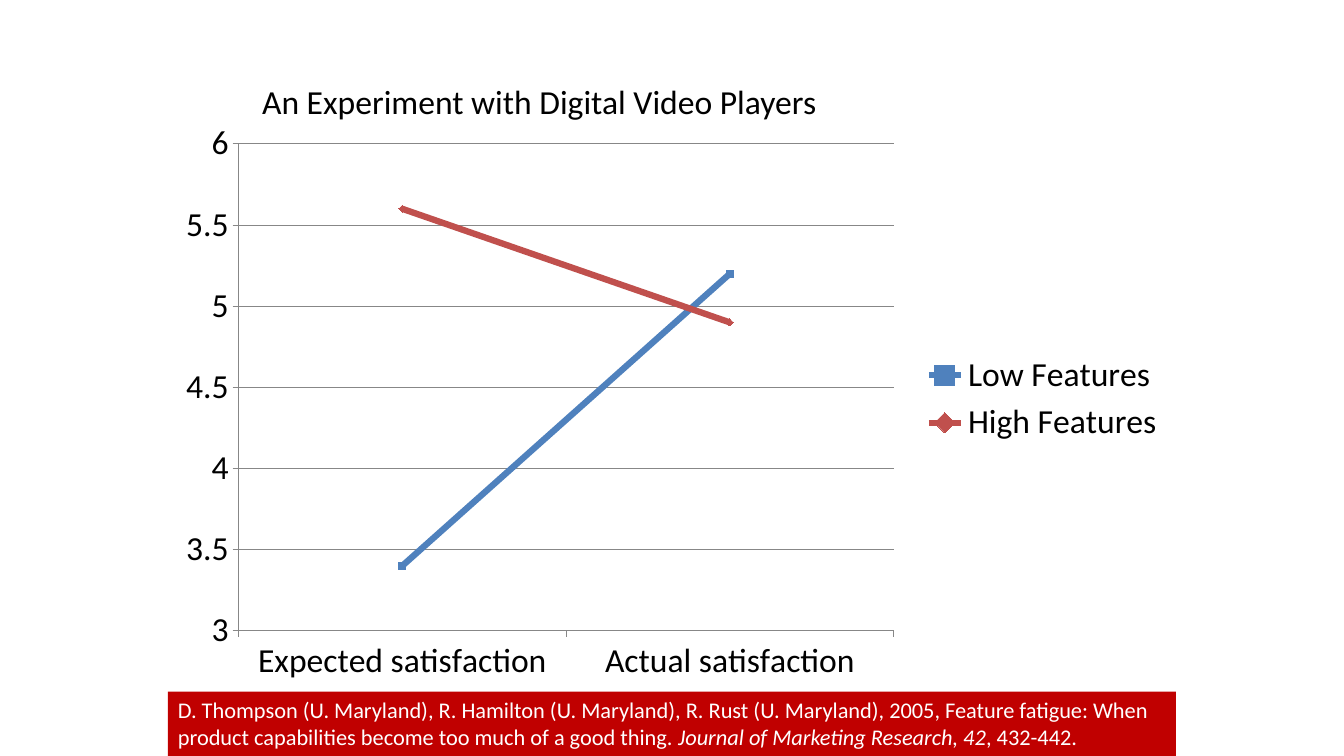
import pptx
import pptx.chart.data
import pptx.dml.color
import pptx.enum.chart
import pptx.enum.text
import pptx.oxml
import pptx.oxml.ns
import pptx.util

Pt = pptx.util.Pt
FONT = "Calibri"
BLACK, WHITE, GRID = "000000", "FFFFFF", "878787"


def colour(hex_string):
    return pptx.dml.color.RGBColor.from_string(hex_string)


def style_font(font, size, hex_string, **formats):
    formats = {"name": FONT, "size": Pt(size), **formats}
    for attribute, value in formats.items():
        setattr(font, attribute, value)
    font.color.rgb = colour(hex_string)


deck = pptx.Presentation()
deck.slide_width, deck.slide_height = Pt(960), Pt(540)
slide = deck.slides.add_slide(deck.slide_layouts[5])

# Satisfaction chart
satisfaction = pptx.chart.data.CategoryChartData()
satisfaction.categories = ["Expected satisfaction", "Actual satisfaction"]
satisfaction.add_series("Low Features", [3.4, 5.2])
satisfaction.add_series("High Features", [5.6, 4.9])
chart = slide.shapes.add_chart(
    pptx.enum.chart.XL_CHART_TYPE.LINE_MARKERS,
    Pt(120), Pt(78), Pt(720), Pt(414), satisfaction).chart
chart.has_title = False
style_font(chart.font, 24, BLACK)

chart.has_legend = True
chart.legend.position = pptx.enum.chart.XL_LEGEND_POSITION.RIGHT
chart.legend.include_in_layout = False
style_font(chart.legend.font, 24, BLACK)

scale = {"minimum_scale": 3, "maximum_scale": 6, "major_unit": 0.5,
         "has_major_gridlines": True}
for attribute, value in scale.items():
    setattr(chart.value_axis, attribute, value)
chart.value_axis.tick_labels.number_format = "General"
chart.value_axis.tick_labels.number_format_is_linked = False

for axis in (chart.category_axis, chart.value_axis):
    axis.major_tick_mark = pptx.enum.chart.XL_TICK_MARK.OUTSIDE
    style_font(axis.tick_labels.font, 24, BLACK)
for line in (chart.category_axis.format.line, chart.value_axis.format.line,
             chart.value_axis.major_gridlines.format.line):
    line.color.rgb = colour(GRID)
    line.width = Pt(0.75)

MARKERS = pptx.enum.chart.XL_MARKER_STYLE
looks = [("4F81BD", MARKERS.SQUARE), ("C0504D", MARKERS.DIAMOND)]
for series, (hue, marker) in zip(chart.plots[0].series, looks):
    series.smooth = False
    series.format.line.color.rgb = colour(hue)
    series.format.line.width = Pt(4.5)
    series.marker.style = marker
    series.marker.size = 5
    series.marker.format.fill.solid()
    series.marker.format.fill.fore_color.rgb = colour(hue)
    series.marker.format.line.color.rgb = colour(hue)

# Inner plot area, as fractions of the chart
plot_area = chart.plots[0]._element.getparent()
for old_layout in plot_area.findall(pptx.oxml.ns.qn("c:layout")):
    plot_area.remove(old_layout)
fractions = {"x": 0.07, "y": 0.06, "w": 0.65, "h": 0.84}
plot_area.insert(0, pptx.oxml.parse_xml(
    f'<c:layout {pptx.oxml.ns.nsdecls("c")}><c:manualLayout>'
    '<c:layoutTarget val="inner"/><c:xMode val="edge"/><c:yMode val="edge"/>'
    + "".join(f'<c:{side} val="{part}"/>' for side, part in fractions.items())
    + "</c:manualLayout></c:layout>"))

# Citation bar
citation = slide.shapes.add_shape(
    pptx.enum.shapes.MSO_SHAPE.RECTANGLE, Pt(120), Pt(494), Pt(720), Pt(46))
citation.shadow.inherit = False
citation.fill.solid()
citation.fill.fore_color.rgb = colour("C00000")
citation.line.fill.background()
reference = citation.text_frame.paragraphs[0]
for wording, italic in [
    ("D. Thompson (U. Maryland), R. Hamilton (U. Maryland), R. Rust "
     "(U. Maryland), 2005, Feature fatigue: When product capabilities "
     "become too much of a good thing. ", False),
    ("Journal of Marketing Research, 42", True),
    (", 432-442.", False),
]:
    run = reference.add_run()
    run.text = wording
    style_font(run.font, 16, WHITE, italic=italic)

# Heading
heading = slide.shapes.title
bounds = {"left": 180, "top": 54, "width": 630, "height": 36}
for attribute, value in bounds.items():
    setattr(heading, attribute, Pt(value))
heading.text_frame.text = "An Experiment with Digital Video Players"
style_font(heading.text_frame.paragraphs[0].runs[0].font, 24, BLACK)

for frame in (citation.text_frame, heading.text_frame):
    frame.word_wrap = True
    frame.auto_size = pptx.enum.text.MSO_AUTO_SIZE.NONE
    frame.vertical_anchor = pptx.enum.text.MSO_ANCHOR.TOP
    frame.paragraphs[0].alignment = pptx.enum.text.PP_ALIGN.LEFT

deck.save("out.pptx")
